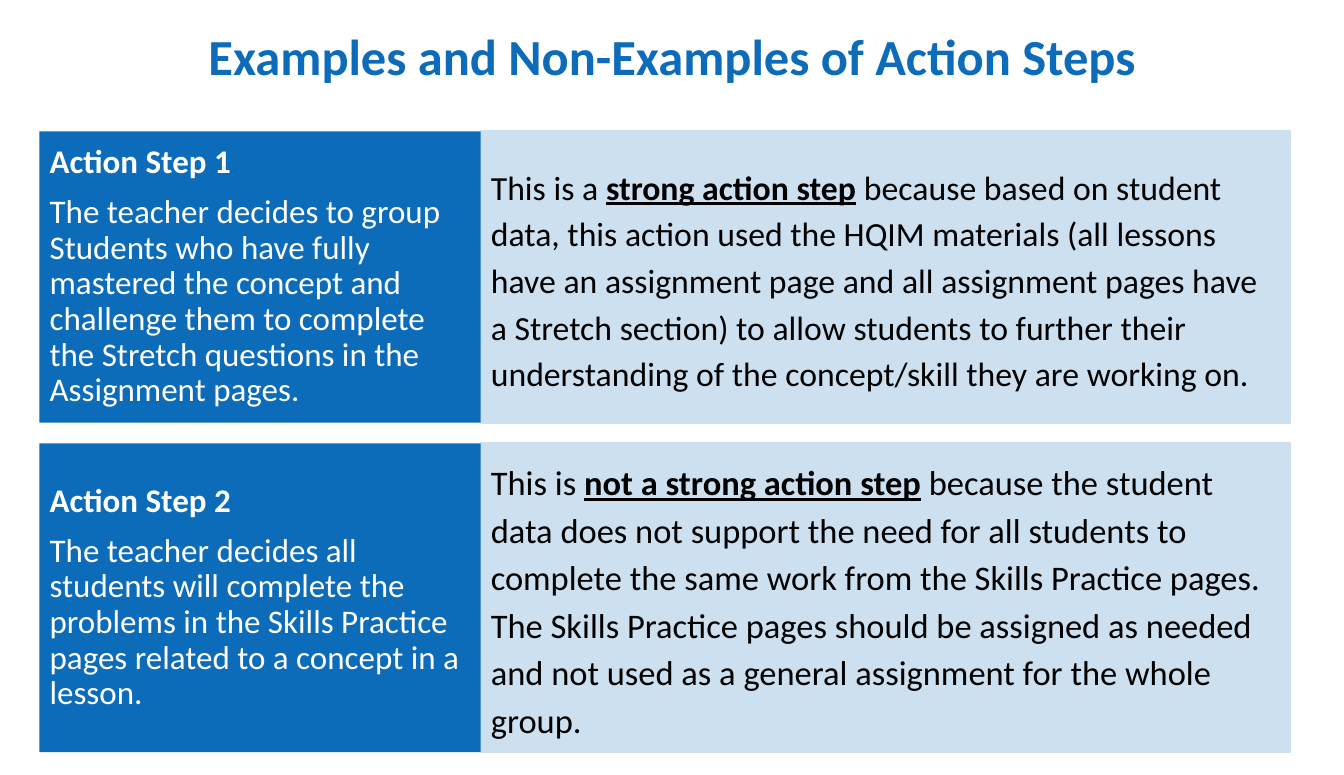
"""Build a slide that contrasts a strong and a weak action step."""
import pptx
import pptx.dml.color
import pptx.enum.shapes
import pptx.enum.text
import pptx.util
from pptx.util import Cm

COLORS = {"blue": "0D6CB9", "pale": "CDE0F0", "white": "FFFFFF", "black": "000000"}
FONT = "Calibri"
LEFT, STEP_WIDTH, REASON_WIDTH = 0.97, 10.84, 19.89

ROWS = [
    {
        "top": 3.23, "height": 7.16, "reason_size": 23.5,
        "heading": "Action Step 1",
        "step": "The teacher decides to group Students who have fully mastered the concept "
                "and challenge them to complete the Stretch questions in the Assignment pages.",
        "reason": [
            ("This is a ", False),
            ("strong action step", True),
            (" because based on student data, this action used the HQIM materials (all "
             "lessons have an assignment page and all assignment pages have a Stretch "
             "section) to allow students to further their understanding of the "
             "concept/skill they are working on.", False),
        ],
    },
    {
        "top": 10.9, "height": 7.59, "reason_size": 24,
        "heading": "Action Step 2",
        "step": "The teacher decides all students will complete the problems in the Skills "
                "Practice pages related to a concept in a lesson.",
        "reason": [
            ("This is ", False),
            ("not a strong action step", True),
            (" because the student data does not support the need for all students to "
             "complete the same work from the Skills Practice pages. The Skills Practice "
             "pages should be assigned as needed and not used as a general assignment "
             "for the whole group.", False),
        ],
    },
]


def rgb(name):
    """Return the named colour."""
    return pptx.dml.color.RGBColor.from_string(COLORS[name])


def add_run(paragraph, text, *, size, color, bold=False, underline=False):
    """Add formatted text to a paragraph."""
    run = paragraph.add_run()
    run.text = text
    run.font.name = FONT
    run.font.size = pptx.util.Pt(size)
    run.font.color.rgb = rgb(color)
    run.font.bold = bold
    run.font.underline = underline


def format_paragraph(paragraph, *, spacing, before=0, align="LEFT"):
    """Set the alignment and spacing of a paragraph."""
    paragraph.alignment = pptx.enum.text.PP_ALIGN[align]
    paragraph.line_spacing = spacing
    paragraph.space_before = pptx.util.Pt(before)


def format_frame(frame):
    """Wrap and centre the text of a frame vertically at a fixed size."""
    frame.word_wrap = True
    frame.auto_size = pptx.enum.text.MSO_AUTO_SIZE.NONE
    frame.vertical_anchor = pptx.enum.text.MSO_ANCHOR.MIDDLE


def add_panel(slide, left, top, width, height, *, fill, outline=None):
    """Add a filled rectangle and return its text frame."""
    shape = slide.shapes.add_shape(
        pptx.enum.shapes.MSO_SHAPE.RECTANGLE, Cm(left), Cm(top), Cm(width), Cm(height))
    shape.shadow.inherit = False
    shape.fill.solid()
    shape.fill.fore_color.rgb = rgb(fill)
    if outline:
        shape.line.color.rgb = rgb(outline)
        shape.line.width = pptx.util.Pt(1.5)
    else:
        shape.line.fill.background()
    format_frame(shape.text_frame)
    return shape.text_frame


def add_title(slide, text):
    """Place and fill the title placeholder."""
    title = slide.shapes.title
    title.left, title.top, title.width, title.height = Cm(4.85), Cm(0.13), Cm(23.32), Cm(2.67)
    format_frame(title.text_frame)
    paragraph = title.text_frame.paragraphs[0]
    format_paragraph(paragraph, spacing=0.9, align="CENTER")
    add_run(paragraph, text, size=35.2, color="blue", bold=True)


def add_reason(slide, row):
    """Add the pale panel that judges an action step."""
    frame = add_panel(slide, LEFT + STEP_WIDTH, row["top"], REASON_WIDTH, row["height"],
                      fill="pale", outline="pale")
    paragraph = frame.paragraphs[0]
    format_paragraph(paragraph, spacing=1.15)
    for text, stressed in row["reason"]:
        add_run(paragraph, text, size=row["reason_size"], color="black",
                bold=stressed, underline=stressed)


def add_step(slide, row):
    """Add the blue panel that states an action step."""
    frame = add_panel(slide, LEFT, row["top"], STEP_WIDTH, row["height"], fill="blue")
    heading, body = frame.paragraphs[0], frame.add_paragraph()
    format_paragraph(heading, spacing=0.9)
    add_run(heading, row["heading"], size=23, color="white", bold=True)
    format_paragraph(body, spacing=0.9, before=10)
    add_run(body, row["step"], size=23, color="white")


def main():
    """Build and save the presentation."""
    presentation = pptx.Presentation()
    presentation.slide_width, presentation.slide_height = Cm(33.02), Cm(19.05)
    slide = presentation.slides.add_slide(presentation.slide_layouts[5])
    add_title(slide, "Examples and Non-Examples of Action Steps")
    for row in ROWS:
        add_reason(slide, row)
        add_step(slide, row)
    presentation.save("out.pptx")


if __name__ == "__main__":
    main()
